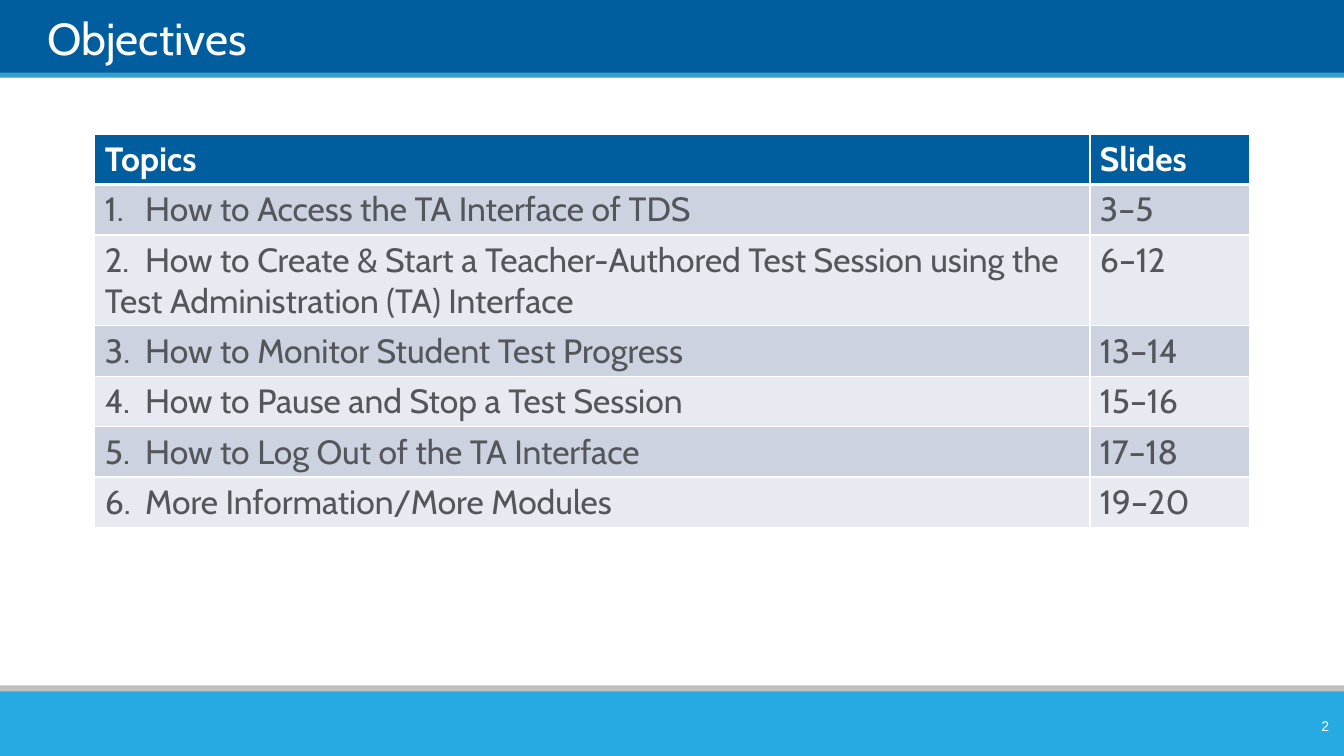
from dataclasses import dataclass

from lxml import etree
from pptx import Presentation
from pptx import util as u
from pptx.dml.color import RGBColor
from pptx.enum import shapes, text
from pptx.oxml import ns

Inches = u.Inches


@dataclass(frozen=True)
class Theme:
    white: str = "FFFFFF"
    navy: str = "005E9E"
    trim: str = "35A0CE"
    gray: str = "BFBFBF"
    sky: str = "27AAE1"
    ink: str = "53565A"
    bands: tuple = ("CCD2DF", "E7EAF0")
    font: str = "Cabin"
    plain: str = "Arial"
    head: int = 32
    body: int = 24
    note: int = 10


BARS = [
    (-0.01, 0.75, "navy"),
    (0.72, 0.05, "trim"),
    (6.8, 0.14, "gray"),
    (6.86, 0.64, "sky"),
]
TOPICS = [
    ("Topics", "Slides"),
    ("1.\tHow to Access the TA Interface of TDS", "3–5"),
    ("2.\tHow to Create & Start a Teacher-Authored Test Session using the "
     "Test Administration (TA) Interface", "6–12"),
    ("3.\tHow to Monitor Student Test Progress", "13–14"),
    ("4.\tHow to Pause and Stop a Test Session", "15–16"),
    ("5.\tHow to Log Out of the TA Interface", "17–18"),
    ("6.\tMore Information/More Modules", "19–20"),
]
WIDTHS = (9.87, 1.58)
HEIGHTS = (0.5, 0.5, 0.9, 0.5, 0.5, 0.5, 0.5)


def add(parent, tag, **attrs):
    """Append a DrawingML child with the given attributes."""
    return etree.SubElement(parent, ns.qn("a:" + tag), attrs)


class Page:
    def __init__(self, deck, theme):
        self.theme = theme
        self.slide = deck.slides.add_slide(deck.slide_layouts[5])
        self.shapes = self.slide.shapes

    def style(self, par, size, color, font=None, bold=False):
        face = par.font
        face.name = font or self.theme.font
        face.size = u.Pt(size)
        face.bold = bold
        face.color.rgb = RGBColor.from_string(color)

    def bar(self, top, height, color):
        bar = self.shapes.add_shape(
            shapes.MSO_SHAPE.RECTANGLE, 0, Inches(top), Inches(13.33), Inches(height))
        bar.shadow.inherit = False
        bar.fill.solid()
        bar.fill.fore_color.rgb = RGBColor.from_string(color)
        bar.line.fill.background()

    def title(self, words):
        title = self.shapes.title
        self.shapes._spTree.append(title._element)  # above the bars
        title.left, title.top = Inches(0.47), Inches(0.07)
        title.width, title.height = Inches(12.05), Inches(0.57)
        frame = title.text_frame
        frame.text = words
        frame.auto_size = text.MSO_AUTO_SIZE.NONE
        frame.vertical_anchor = text.MSO_ANCHOR.BOTTOM
        frame.margin_left = frame.margin_right = 0
        frame.margin_top = frame.margin_bottom = 0
        par = frame.paragraphs[0]
        par.alignment = text.PP_ALIGN.LEFT
        self.style(par, self.theme.head, self.theme.white)

    def number(self, words):
        box = self.shapes.add_textbox(
            Inches(12.51), Inches(7.05), Inches(0.77), Inches(0.3))
        frame = box.text_frame
        frame.word_wrap = True
        frame.vertical_anchor = text.MSO_ANCHOR.MIDDLE
        par = frame.paragraphs[0]
        par.text = words
        par.alignment = text.PP_ALIGN.RIGHT
        self.style(par, self.theme.note, self.theme.white, self.theme.plain)

    def border(self, cell, row):
        """Draw white edges, with a thick rule under the header."""
        props = cell._tc.get_or_add_tcPr()
        thick = {0: "lnB", 1: "lnT"}.get(row)
        for side in ("lnL", "lnR", "lnT", "lnB"):
            line = add(props, side, w=str(u.Pt(3 if side == thick else 1)))
            add(add(line, "solidFill"), "srgbClr", val=self.theme.white)

    def cell(self, cell, words, row):
        theme = self.theme
        head = row == 0
        self.border(cell, row)
        cell.fill.solid()
        fill = theme.navy if head else theme.bands[(row - 1) % 2]
        cell.fill.fore_color.rgb = RGBColor.from_string(fill)
        par = cell.text_frame.paragraphs[0]
        par.text = words
        if "\t" in words:
            tabs = add(par._p.get_or_add_pPr(), "tabLst")
            add(tabs, "tab", pos=str(Inches(0.4)), algn="l")
        self.style(par, theme.body, theme.white if head else theme.ink, bold=head)

    def table(self, rows):
        table = self.shapes.add_table(
            len(rows), len(WIDTHS), Inches(0.94), Inches(1.33),
            Inches(sum(WIDTHS)), Inches(sum(HEIGHTS))).table
        for col, width in zip(table.columns, WIDTHS):
            col.width = Inches(width)
        for r, (row, height) in enumerate(zip(rows, HEIGHTS)):
            table.rows[r].height = Inches(height)
            for c, words in enumerate(row):
                self.cell(table.cell(r, c), words, r)


def main():
    deck = Presentation()
    deck.slide_width, deck.slide_height = Inches(13.33), Inches(7.5)
    theme = Theme()
    page = Page(deck, theme)
    for top, height, color in BARS:
        page.bar(top, height, getattr(theme, color))
    page.title("Objectives")
    page.number("2")
    page.table(TOPICS)
    deck.save("out.pptx")


if __name__ == "__main__":
    main()
